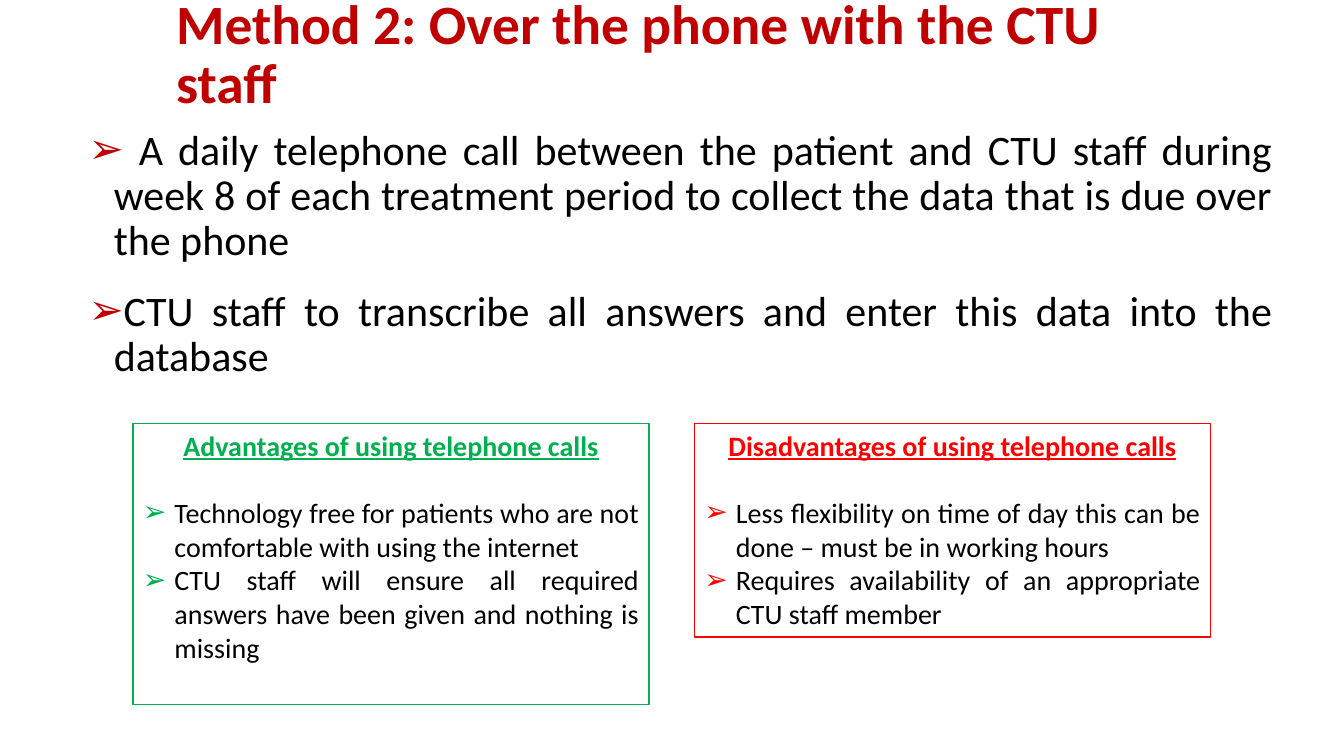
"""Build the slide on collecting data over the phone with the CTU staff."""
from lxml.etree import SubElement
from pptx import Presentation
from pptx.dml.color import RGBColor
from pptx.enum.shapes import MSO_SHAPE as Shape
from pptx.enum.text import MSO_ANCHOR as Anchor, PP_ALIGN as Align
from pptx.oxml.ns import qn
from pptx.util import Pt

TITLE = "Method 2: Over the phone with the CTU staff"
STEPS = [
    " A daily telephone call between the patient and CTU staff during week 8 of each "
    "treatment period to collect the data that is due over the phone",
    "CTU staff to transcribe all answers and enter this data into the database",
]
PANELS = [
    ("Advantages of using telephone calls", "00B050", 201, [
        "Technology free for patients who are not comfortable with using the internet",
        "CTU staff will ensure all required answers have been given and nothing is missing",
    ]),
    ("Disadvantages of using telephone calls", "FF0000", 152.6, [
        "Less flexibility on time of day this can be done – must be in working hours",
        "Requires availability of an appropriate CTU staff member",
    ]),
]
RED, BLACK = "C00000", "000000"
PANEL_LEFT, PANEL_TOP, PANEL_WIDTH, PANEL_GAP = 95, 302.4, 368.6, 32.4


def color(value):
    return RGBColor.from_string(value)


def write(frame, index, text, size, ink, bold=False):
    paragraph = frame.add_paragraph() if index else frame.paragraphs[0]
    paragraph.text = text
    font = paragraph.font
    font.name, font.size, font.bold = "Calibri", Pt(size), bold
    font.color.rgb = color(ink)
    return paragraph


def add_bullet(paragraph, ink, indent):
    paragraph.alignment = Align.JUSTIFY
    props = paragraph._p.get_or_add_pPr()
    props.set("marL", str(Pt(indent)))
    props.set("indent", str(-Pt(indent)))
    tint = SubElement(props, qn("a:buClr"))
    SubElement(tint, qn("a:srgbClr"), val=ink)
    SubElement(props, qn("a:buFont"), typeface="Arial")
    SubElement(props, qn("a:buChar"), char="➢")


def add_text_box(slide, *box):
    frame = slide.shapes.add_textbox(*map(Pt, box)).text_frame
    frame.word_wrap = True
    return frame


def add_panel(slide, left, heading, ink, height, points):
    panel = slide.shapes.add_shape(
        Shape.RECTANGLE, Pt(left), Pt(PANEL_TOP), Pt(PANEL_WIDTH), Pt(height))
    panel.shadow.inherit = False
    panel.fill.background()
    panel.line.color.rgb = color(ink)
    panel.line.width = Pt(1)
    frame = panel.text_frame
    frame.word_wrap = True
    frame.vertical_anchor = Anchor.TOP
    head = write(frame, 0, heading, 20, ink, bold=True)
    head.font.underline = True
    head.alignment = Align.CENTER
    head.space_after = Pt(24)
    for index, point in enumerate(points, 1):
        add_bullet(write(frame, index, point, 20, BLACK), ink, 22.5)


def main():
    deck = Presentation()
    deck.slide_width, deck.slide_height = Pt(960), Pt(540)
    slide = deck.slides.add_slide(deck.slide_layouts[6])

    title = add_text_box(slide, 118.8, 13, 735, 54)
    title.vertical_anchor = Anchor.MIDDLE
    write(title, 0, TITLE, 39.6, RED, bold=True).line_spacing = 0.9

    steps = add_text_box(slide, 56.2, 88.6, 860.4, 155.5)
    for index, step in enumerate(STEPS):
        paragraph = write(steps, index, step, 30, BLACK)
        paragraph.line_spacing = 0.9
        paragraph.space_before, paragraph.space_after = Pt(10), Pt(8)
        add_bullet(paragraph, RED, 18)

    for index, panel in enumerate(PANELS):
        add_panel(slide, PANEL_LEFT + index * (PANEL_WIDTH + PANEL_GAP), *panel)

    deck.save("out.pptx")


if __name__ == "__main__":
    main()
